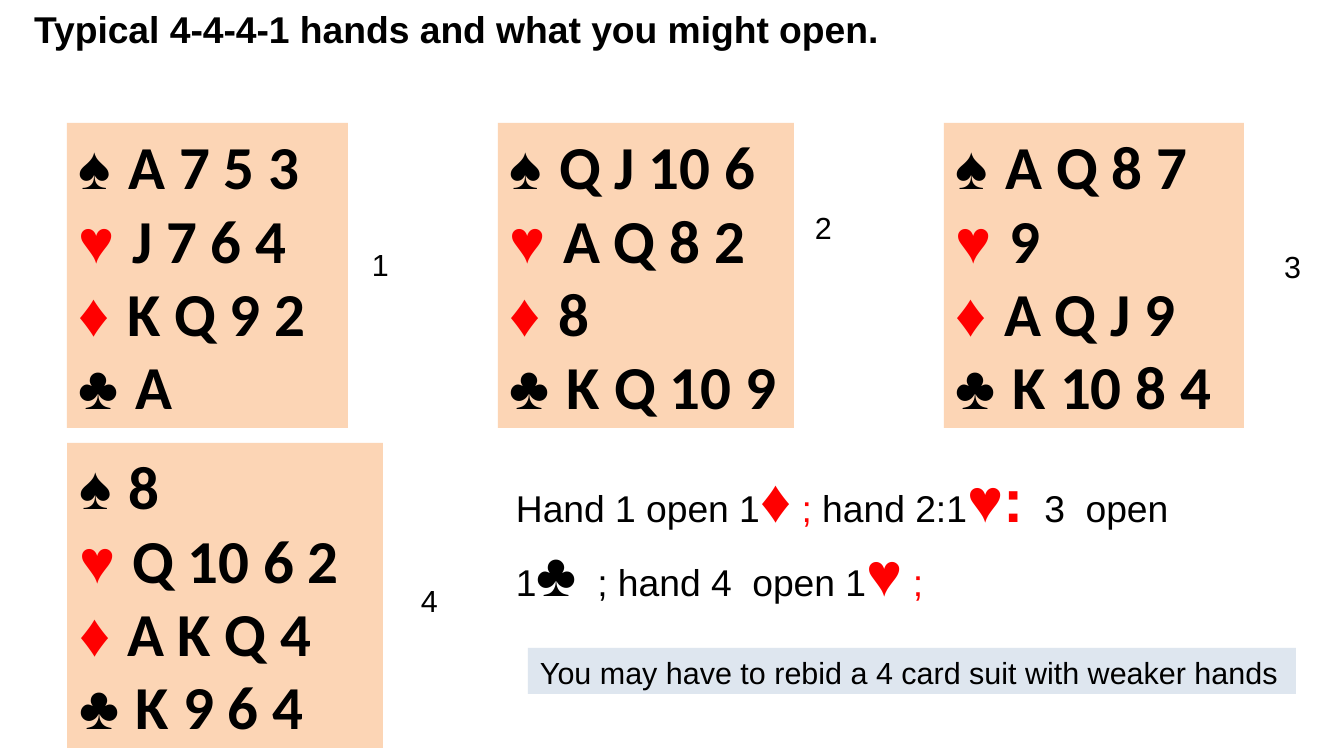
from dataclasses import dataclass

from pptx import Presentation
from pptx import util as u
from pptx.dml.color import RGBColor
from pptx.enum import shapes, text

PX = 914400 / 122  # EMU in one px


@dataclass(frozen=True)
class Theme:
    black: RGBColor = RGBColor(0, 0, 0)
    red: RGBColor = RGBColor(255, 0, 0)
    card: RGBColor = RGBColor(0xFC, 0xD5, 0xB5)
    note: RGBColor = RGBColor(0xDE, 0xE6, 0xEF)
    font: str = "Arial"
    card_font: str = "Calibri"
    title_size: int = 22
    body_size: int = 22
    card_size: int = 36
    label_size: int = 18


T = Theme()
SUITS = [("♠", T.black), ("♥", T.red), ("♦", T.red), ("♣", T.black)]
CARD_LEFT, CARD_HEIGHT = 67, 305
TOP_ROW, BOTTOM_ROW = 123, 443

# Left, top and width of the card; position of its number; ranks by suit
HANDS = [
    (CARD_LEFT, TOP_ROW, 281, (360, 240), ["A 7 5 3", "J 7 6 4", "K Q 9 2", "A"]),
    (498, TOP_ROW, 296, (803, 203), ["Q J 10 6", "A Q 8 2", "8", "K Q 10 9"]),
    (944, TOP_ROW, 300, (1272, 242), ["A Q 8 7", "9", "A Q J 9", "K 10 8 4"]),
    (CARD_LEFT, BOTTOM_ROW, 316, (409, 576), ["8", "Q 10 6 2", "A K Q 4", "K 9 6 4"]),
]

# Text, colour and whether it is a large suit symbol
OPENINGS = [
    ("Hand 1 open 1", T.black, False),
    ("♦", T.red, True),
    (" ; ", T.red, False),
    ("hand 2:1", T.black, False),
    ("♥:", T.red, True),
    ("  3  open 1", T.black, False),
    ("♣", T.black, True),
    ("  ; hand 4  open 1", T.black, False),
    ("♥", T.red, True),
    (" ;", T.red, False),
]


def px(n):
    return u.Emu(round(n * PX))


def style(font, size, color=T.black, bold=False, name=T.font):
    font.name, font.size, font.bold = name, u.Pt(size), bold
    font.color.rgb = color


def prepare_frame(sp, wrap=True):
    tf = sp.text_frame
    tf.word_wrap = wrap
    tf.auto_size = text.MSO_AUTO_SIZE.NONE
    tf.vertical_anchor = text.MSO_ANCHOR.TOP
    tf.paragraphs[0].alignment = text.PP_ALIGN.LEFT
    return tf


def add_run(p, content, **look):
    r = p.add_run()
    r.text = content
    style(r.font, **look)


def add_title(s, content):
    sp = s.shapes.title
    sp.left, sp.top, sp.width, sp.height = px(22), px(0), px(938), px(56)
    p = prepare_frame(sp).paragraphs[0]
    p.text = content
    p.line_spacing = 1.0
    style(p.font, T.title_size, bold=True)


def add_panel(s, x, y, w, h, color):
    sp = s.shapes.add_shape(shapes.MSO_SHAPE.RECTANGLE, px(x), px(y), px(w), px(h))
    sp.shadow.inherit = False
    sp.fill.solid()
    sp.fill.fore_color.rgb = color
    sp.line.fill.background()
    return prepare_frame(sp, wrap=False)


def add_text(s, x, y, w, h):
    return prepare_frame(s.shapes.add_textbox(px(x), px(y), px(w), px(h)))


def add_line(tf, content, size):
    p = tf.paragraphs[0]
    p.text = content
    style(p.font, size)


def add_hand(s, x, y, w, holdings):
    tf = add_panel(s, x, y, w, CARD_HEIGHT, T.card)
    for i, ((suit, color), ranks) in enumerate(zip(SUITS, holdings)):
        p = tf.add_paragraph() if i else tf.paragraphs[0]
        p.alignment = text.PP_ALIGN.LEFT
        add_run(p, suit + " ", size=T.card_size, color=color, bold=True)
        add_run(p, ranks, size=T.card_size, bold=True, name=T.card_font)


def add_openings(s):
    p = add_text(s, 504, 456, 744, 161).paragraphs[0]
    for content, color, symbol in OPENINGS:
        size = T.card_size if symbol else T.body_size
        add_run(p, content, size=size, color=color, bold=symbol)


def main():
    prs = Presentation()
    prs.slide_width, prs.slide_height = px(1344), px(756)
    s = prs.slides.add_slide(prs.slide_layouts.get_by_name("Title Only"))

    add_title(s, "Typical 4-4-4-1 hands and what you might open.")

    # Numbered hands
    for number, (x, y, w, label, holdings) in enumerate(HANDS, 1):
        add_hand(s, x, y, w, holdings)
        add_line(add_text(s, *label, 48, 46), str(number), T.label_size)

    # Opening bids and closing advice
    add_openings(s)
    advice = add_panel(s, 528, 648, 768, 46, T.note)
    add_line(advice, "You may have to rebid a 4 card suit with weaker hands", T.label_size)

    prs.save("out.pptx")


if __name__ == "__main__":
    main()
